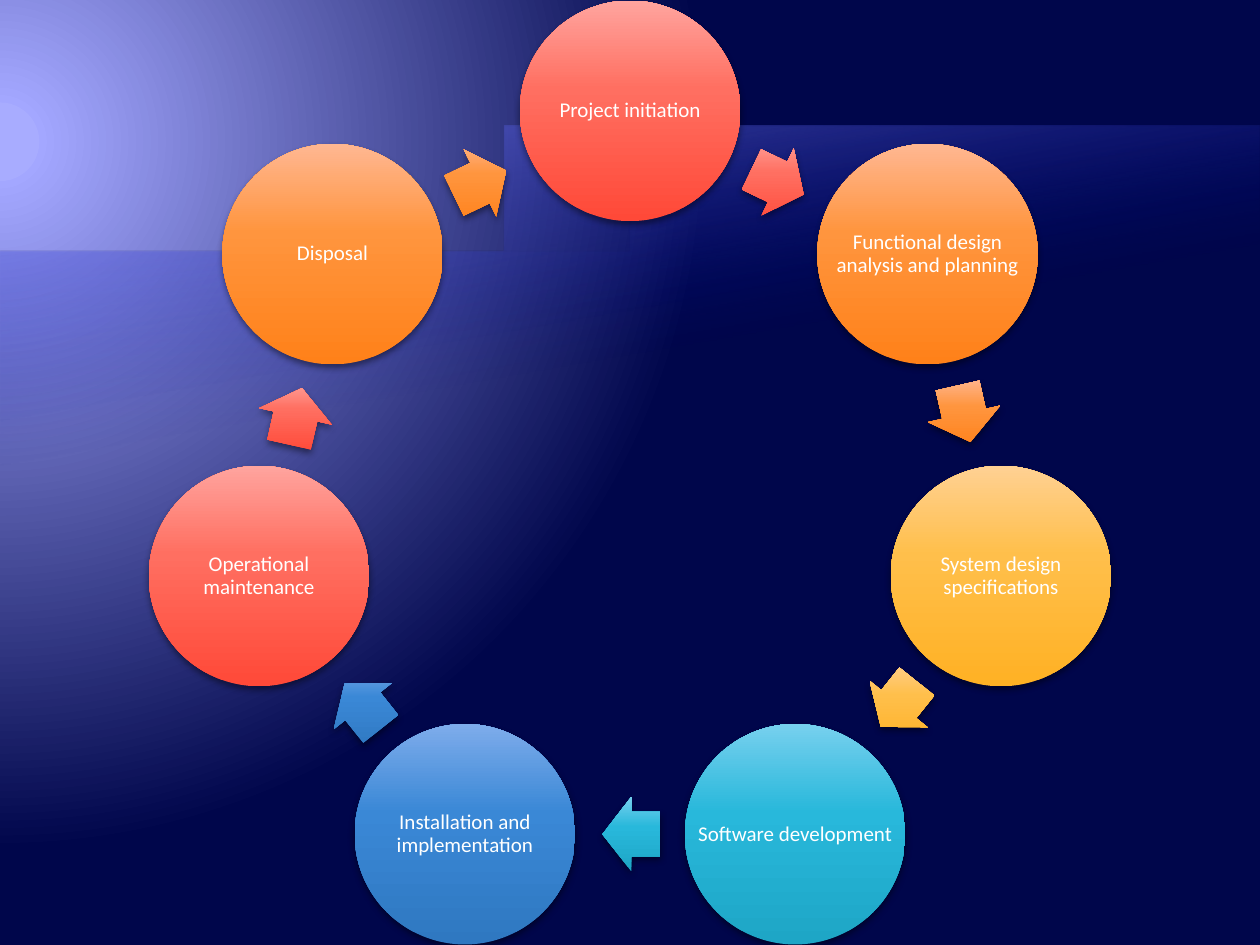
from math import cos, radians, sin

from pptx import Presentation
from pptx.dml.color import RGBColor
from pptx.enum.shapes import MSO_SHAPE
from pptx.enum.text import MSO_ANCHOR, PP_ALIGN
from pptx.oxml import parse_xml
from pptx.oxml.ns import nsdecls, qn
from pptx.util import Inches, Pt

COLORS = {
    "red": ("FF4938", "FF6F61", "FFA49E"),
    "orange": ("FF8119", "FF953E", "FFB792"),
    "yellow": ("FFB124", "FFBF4B", "FFD193"),
    "teal": ("1EA6C6", "28B8DB", "77D0EE"),
    "blue": ("2F78C1", "3A88D6", "7EACEB"),
    "glow": "A8ACFF",
    "halo": "A3A7FF",
    "night": "00064B",
    "wave_clear": "000D9E",
    "wave_top": "797FFF",
    "text": "FFFFFF",
}
FONT = "Calibri"
STAGES = [
    ("Project initiation", "red"),
    ("Functional design analysis and planning", "orange"),
    ("System design specifications", "yellow"),
    ("Software development", "teal"),
    ("Installation and implementation", "blue"),
    ("Operational maintenance", "red"),
    ("Disposal", "orange"),
]
# Each wave: start, two control points and end of its curve, bottom, top colour, opacity
WAVES = [
    ([(0, 2.13), (5, 2.13), (5.34, 0.05), (10, 1.25)], 7.33, "wave_top", 55),
    ([(0, 2.13), (5, 2.13), (5.98, 0.31), (10, 1.47)], 6.37, "halo", 30),
]
CENTER_X, CENTER_Y, RING_RADIUS = 5, 3.9, 3.02
DIAMETER = 1.75
ARROW_WIDTH, ARROW_HEIGHT = 0.46, 0.59
ARROW_SETBACK = 0.01
LINEAR = '<a:lin ang="{}" scaled="0"/>'
RADIAL = '<a:path path="circle"><a:fillToRect l="20000" t="30000" r="135000" b="100000"/></a:path>'


def curve_points(curve, steps=60):
    """Points along a cubic Bezier curve, in inches."""
    points = []
    for step in range(steps + 1):
        t = step / steps
        weights = ((1 - t) ** 3, 3 * t * (1 - t) ** 2, 3 * t * t * (1 - t), t ** 3)
        points.append(tuple(sum(w * p[axis] for w, p in zip(weights, curve)) for axis in (0, 1)))
    return points


def ring_point(angle):
    """Point of the cycle, with the angle in degrees clockwise from the top."""
    turn = radians(angle)
    return CENTER_X + RING_RADIUS * sin(turn), CENTER_Y - RING_RADIUS * cos(turn)


class CycleSlide:
    def __init__(self, slide):
        self.slide = slide

    def gradient(self, fill, parent, stops, direction):
        """Fill with (position, colour, opacity) stops, all in percent."""
        fill.solid()
        stop_xml = "".join(
            f'<a:gs pos="{position * 1000}"><a:srgbClr val="{color}">'
            f'<a:alpha val="{opacity * 1000}"/></a:srgbClr></a:gs>'
            for position, color, opacity in stops
        )
        solid = parent.find(qn("a:solidFill"))
        parent.replace(solid, parse_xml(
            f'<a:gradFill {nsdecls("a")} rotWithShape="0"><a:gsLst>{stop_xml}</a:gsLst>'
            f"{direction}</a:gradFill>"
        ))

    def background(self):
        fill = self.slide.background.fill
        fill.solid()
        stops = [(5, COLORS["glow"], 100), (5, COLORS["halo"], 100), (90, COLORS["night"], 100)]
        parent = self.slide._element.find(".//" + qn("p:bgPr"))
        self.gradient(fill, parent, stops, RADIAL)

    def wave(self, curve, bottom, color, opacity):
        start, *others = curve_points(curve) + [(10, bottom), (0, bottom)]
        builder = self.slide.shapes.build_freeform(*start, scale=Inches(1))
        builder.add_line_segments(others, close=True)
        shape = builder.convert_to_shape()
        shape.line.fill.background()
        shape.shadow.inherit = False
        stops = [(65, COLORS["wave_clear"], 0), (100, COLORS[color], opacity)]
        self.gradient(shape.fill, shape._element.spPr, stops, LINEAR.format(260 * 60000))

    def glossy(self, preset, center, width, height, color):
        x, y = center
        shape = self.slide.shapes.add_shape(
            preset, Inches(x - width / 2), Inches(y - height / 2), Inches(width), Inches(height)
        )
        shape.line.fill.background()
        properties = shape._element.spPr
        stops = [(position, shade, 100) for position, shade in zip((0, 60, 100), COLORS[color])]
        self.gradient(shape.fill, properties, stops, LINEAR.format(270 * 60000))
        shape.shadow.inherit = False
        properties.find(qn("a:effectLst")).append(parse_xml(
            f'<a:outerShdw {nsdecls("a")} blurRad="{Pt(4)}" dist="{Pt(2)}" dir="5400000" '
            'rotWithShape="0"><a:srgbClr val="000000"><a:alpha val="43000"/></a:srgbClr></a:outerShdw>'
        ))
        return shape

    def label(self, center, text):
        x, y = center
        box = self.slide.shapes.add_textbox(
            Inches(x - DIAMETER / 2), Inches(y - DIAMETER / 2), Inches(DIAMETER), Inches(DIAMETER)
        )
        frame = box.text_frame
        frame.word_wrap = True
        frame.vertical_anchor = MSO_ANCHOR.MIDDLE
        frame.margin_left = frame.margin_right = Inches(0.02)
        frame.margin_top = frame.margin_bottom = Inches(0.02)
        frame.text = text
        paragraph = frame.paragraphs[0]
        paragraph.alignment = PP_ALIGN.CENTER
        paragraph.line_spacing = 0.9
        font = paragraph.runs[0].font
        font.name = FONT
        font.size = Pt(12)
        font.color.rgb = RGBColor.from_string(COLORS["text"])

    def stage(self, center, text, color):
        self.glossy(MSO_SHAPE.OVAL, center, DIAMETER, DIAMETER, color)
        self.label(center, text)

    def arrow(self, start, end, rotation, color):
        """Arrow midway between two stages, set back slightly towards the first."""
        x = (start[0] + end[0]) / 2 - ARROW_SETBACK * cos(radians(rotation))
        y = (start[1] + end[1]) / 2 - ARROW_SETBACK * sin(radians(rotation))
        shape = self.glossy(MSO_SHAPE.RIGHT_ARROW, (x, y), ARROW_WIDTH, ARROW_HEIGHT, color)
        shape.adjustments[0] = 0.6
        shape.adjustments[1] = 0.5
        shape.rotation = rotation


def main():
    presentation = Presentation()
    presentation.slide_width = Inches(10)
    presentation.slide_height = Inches(7.5)
    cycle = CycleSlide(presentation.slides.add_slide(presentation.slide_layouts[6]))
    cycle.background()
    for wave in WAVES:
        cycle.wave(*wave)
    step = 360 / len(STAGES)
    for index, (text, color) in enumerate(STAGES):
        center = ring_point(index * step)
        following = ring_point((index + 1) * step)
        cycle.stage(center, text, color)
        cycle.arrow(center, following, (index + 0.5) * step, color)
    presentation.save("out.pptx")


if __name__ == "__main__":
    main()
